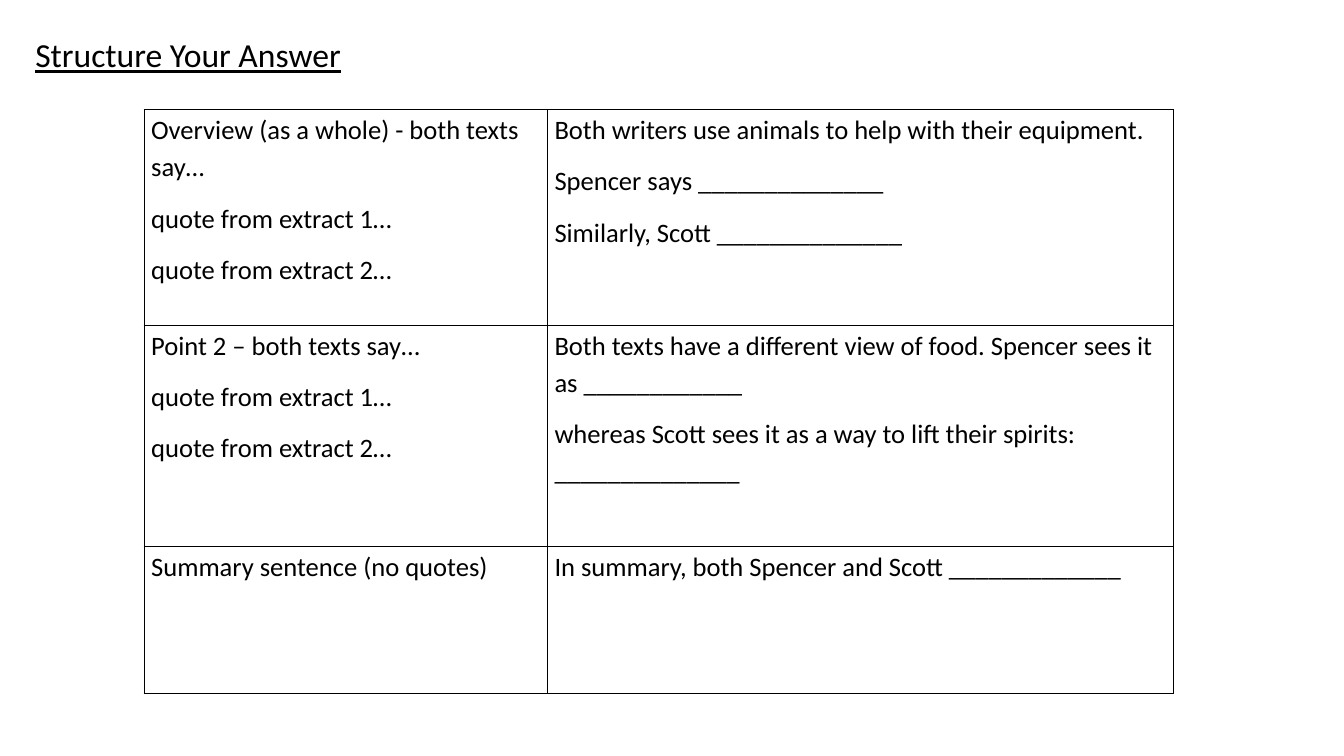
from dataclasses import dataclass

from lxml.etree import SubElement
from pptx import Presentation
from pptx.dml.color import RGBColor
from pptx.enum.text import MSO_ANCHOR, MSO_AUTO_SIZE, PP_ALIGN
from pptx.oxml.ns import qn
from pptx.slide import Slide
from pptx.table import _Cell as Cell
from pptx.text.text import TextFrame
from pptx.util import Inches, Pt


@dataclass(frozen=True)
class Theme:
    font: str = "Calibri"
    ink: str = "000000"
    title_size: float = 24
    body_size: float = 19
    border_width: float = 1


@dataclass(frozen=True)
class AnswerStep:
    height: float
    guidance: list[str]
    starters: list[str]


THEME = Theme()
COLUMN_WIDTHS = (4, 6.21)
QUOTES = ["quote from extract 1…", "quote from extract 2…"]
STEPS = [
    AnswerStep(
        2.14,
        ["Overview (as a whole) - both texts say…", *QUOTES],
        [
            "Both writers use animals to help with their equipment.",
            "Spencer says ______________",
            "Similarly, Scott ______________",
        ],
    ),
    AnswerStep(
        2.19,
        ["Point 2 – both texts say…", *QUOTES],
        [
            "Both texts have a different view of food. Spencer sees it as ____________",
            "whereas Scott sees it as a way to lift their spirits: ______________",
        ],
    ),
    AnswerStep(
        1.46,
        ["Summary sentence (no quotes)"],
        ["In summary, both Spencer and Scott _____________"],
    ),
]


def style_runs(frame: TextFrame, size: float, underline: bool = False) -> None:
    for paragraph in frame.paragraphs:
        for run in paragraph.runs:
            run.font.name = THEME.font
            run.font.size = Pt(size)
            run.font.underline = underline
            run.font.color.rgb = RGBColor.from_string(THEME.ink)


def add_borders(cell: Cell) -> None:
    properties = cell._tc.get_or_add_tcPr()
    for side in ("a:lnL", "a:lnR", "a:lnT", "a:lnB"):
        line = SubElement(properties, qn(side), w=str(Pt(THEME.border_width)))
        fill = SubElement(line, qn("a:solidFill"))
        SubElement(fill, qn("a:srgbClr"), val=THEME.ink)


def fill_cell(cell: Cell, lines: list[str]) -> None:
    cell.margin_left = cell.margin_right = Inches(0.07)
    cell.margin_top = cell.margin_bottom = 0
    add_borders(cell)
    cell.fill.background()
    cell.text_frame.text = "\n".join(lines)
    for paragraph in cell.text_frame.paragraphs:
        paragraph.line_spacing = 1.15
        paragraph.space_after = Pt(10)
    style_runs(cell.text_frame, THEME.body_size)


def add_heading(slide: Slide) -> None:
    heading = slide.shapes.title
    heading.left, heading.top = Inches(0.25), Inches(0.29)
    heading.width, heading.height = Inches(3.26), Inches(0.51)
    frame = heading.text_frame
    frame.text = "Structure Your Answer"
    frame.word_wrap = False
    frame.auto_size = MSO_AUTO_SIZE.SHAPE_TO_FIT_TEXT
    frame.vertical_anchor = MSO_ANCHOR.TOP
    frame.paragraphs[0].alignment = PP_ALIGN.LEFT
    style_runs(frame, THEME.title_size, underline=True)


def add_answer_table(slide: Slide) -> None:
    table = slide.shapes.add_table(
        len(STEPS), len(COLUMN_WIDTHS), Inches(1.43), Inches(1.09),
        Inches(sum(COLUMN_WIDTHS)), Inches(sum(step.height for step in STEPS)),
    ).table
    table.first_row = table.horz_banding = False
    for column, width in zip(table.columns, COLUMN_WIDTHS):
        column.width = Inches(width)
    for row, step in zip(table.rows, STEPS):
        row.height = Inches(step.height)
        for cell, lines in zip(row.cells, (step.guidance, step.starters)):
            fill_cell(cell, lines)


def main() -> None:
    deck = Presentation()
    deck.slide_width, deck.slide_height = Inches(13.33), Inches(7.5)
    # Title Only layout
    slide = deck.slides.add_slide(deck.slide_layouts[5])
    add_heading(slide)
    add_answer_table(slide)
    deck.save("out.pptx")


if __name__ == "__main__":
    main()
